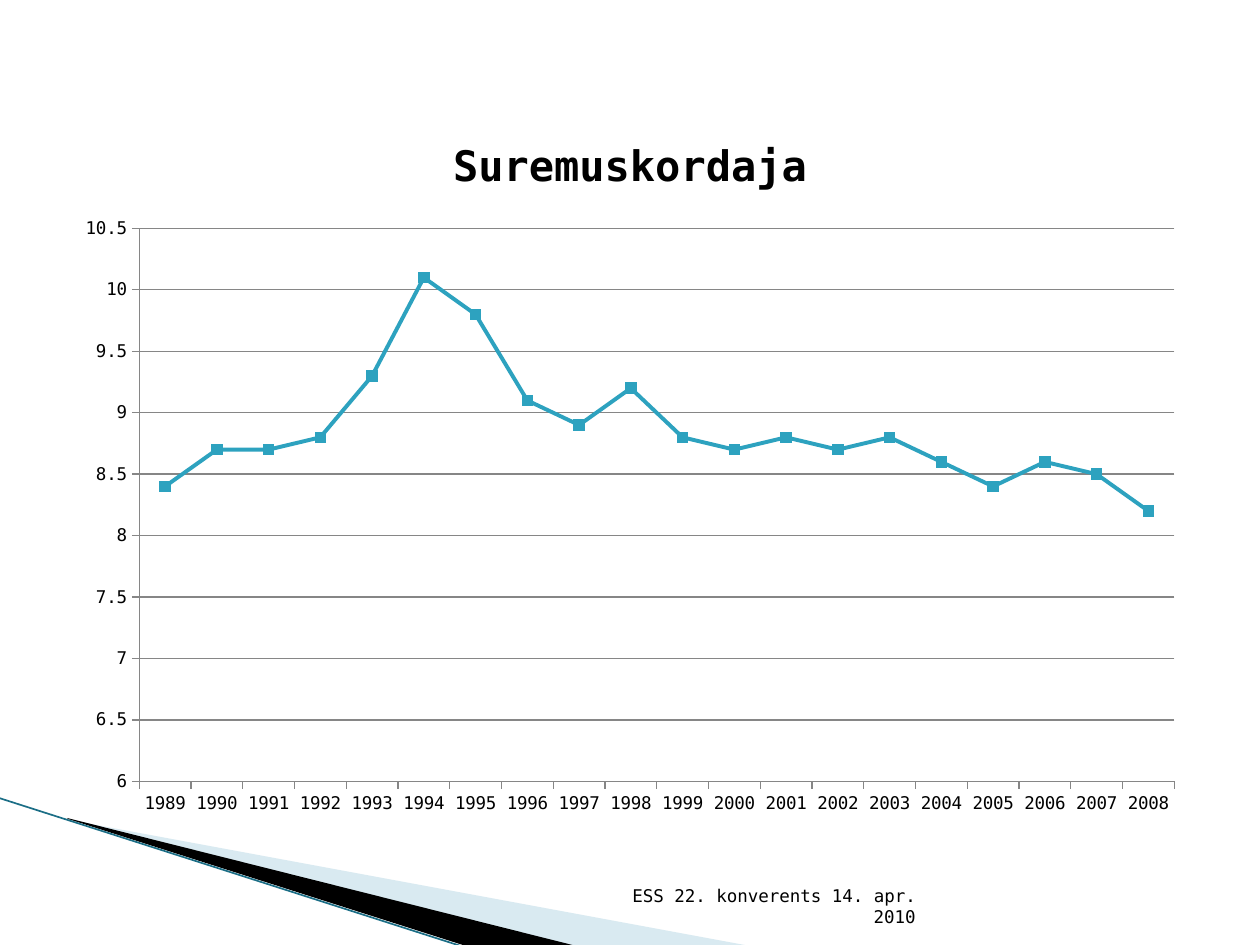
from lxml import etree
from pptx import Presentation
from pptx.chart.data import CategoryChartData
from pptx.dml.color import RGBColor
from pptx.enum.chart import XL_CHART_TYPE, XL_MARKER_STYLE, XL_TICK_MARK
from pptx.enum.shapes import MSO_CONNECTOR
from pptx.enum.text import MSO_ANCHOR, PP_ALIGN
from pptx.oxml.ns import qn
from pptx.util import Pt

EMU_PER_PX = 914400 / 126
FONT = "DejaVu Sans Mono"
COLORS = {
    "text": "000000",
    "series": "2DA2BF",
    "axis": "868686",
    "pale_wedge": "A0CBDC",
    "dark_wedge": "000000",
    "edge": "1B6E86",
}
FIRST_YEAR = 1989
DEATH_RATES = [8.4, 8.7, 8.7, 8.8, 9.3, 10.1, 9.8, 9.1, 8.9, 9.2,
               8.8, 8.7, 8.8, 8.7, 8.8, 8.6, 8.4, 8.6, 8.5, 8.2]


def px(length):
    return round(length * EMU_PER_PX)


def color(name):
    return RGBColor.from_string(COLORS[name])


def style_font(font, size, bold=False):
    font.name = FONT
    font.size = Pt(size)
    font.bold = bold
    font.color.rgb = color("text")


def add_wedge(page, left, top, points, fill, opacity=100):
    corners = [(left + x, top + y) for x, y in points]
    builder = page.shapes.build_freeform(*corners[0], scale=EMU_PER_PX)
    builder.add_line_segments(corners[1:], close=True)
    wedge = builder.convert_to_shape()
    wedge.shadow.inherit = False
    wedge.fill.solid()
    wedge.fill.fore_color.rgb = color(fill)
    wedge.line.fill.background()
    if opacity < 100:
        tint = wedge.fill._xPr.find(qn("a:solidFill"))[0]
        etree.SubElement(tint, qn("a:alpha"), val=str(opacity * 1000))


def add_corner(page, left, top):
    # Two wedges and a thin edge sweep across the lower left corner
    add_wedge(page, left, top, [(69, 22), (750, 148), (575, 148), (69, 21)],
              "pale_wedge", 40)
    add_wedge(page, left, top, [(67, 20), (576, 148), (469, 149), (68, 21)],
              "dark_wedge")
    edge = page.shapes.add_connector(
        MSO_CONNECTOR.STRAIGHT, px(left - 1), px(top), px(left + 467), px(top + 150))
    edge.line.color.rgb = color("edge")
    edge.line.width = Pt(0.95)
    etree.SubElement(edge._element.spPr, qn("a:effectLst"))


def add_footer(page, left, top, width, height):
    box = page.shapes.add_textbox(px(left), px(top), px(width), px(height))
    frame = box.text_frame
    frame.word_wrap = True
    frame.vertical_anchor = MSO_ANCHOR.BOTTOM
    frame.text = "ESS 22. konverents 14. apr. 2010"
    para = frame.paragraphs[0]
    para.alignment = PP_ALIGN.RIGHT
    style_font(para.runs[0].font, 10)


def add_rate_chart(page, left, top, width, height):
    data = CategoryChartData(number_format="General")
    data.categories = [str(FIRST_YEAR + i) for i in range(len(DEATH_RATES))]
    data.add_series("Suremuskordaja", DEATH_RATES)
    chart = page.shapes.add_chart(
        XL_CHART_TYPE.LINE_MARKERS, px(left), px(top), px(width), px(height), data).chart
    style_font(chart.font, 10)
    chart.has_legend = False

    # Title
    chart.has_title = True
    title = chart.chart_title
    title.include_in_layout = False
    title.text_frame.text = "Suremuskordaja"
    style_font(title.text_frame.paragraphs[0].runs[0].font, 24, bold=True)

    # Axes and gridlines
    values = chart.value_axis
    values.minimum_scale = 6
    values.maximum_scale = 10.5
    values.major_unit = 0.5
    values.has_major_gridlines = True
    for axis in (values, chart.category_axis):
        axis.major_tick_mark = XL_TICK_MARK.OUTSIDE
        axis.minor_tick_mark = XL_TICK_MARK.NONE
    for part in (values, chart.category_axis, values.major_gridlines):
        part.format.line.color.rgb = color("axis")
        part.format.line.width = Pt(0.75)

    # Line with square markers
    chart.plots[0].vary_by_categories = False
    series = chart.plots[0].series[0]
    series.smooth = False
    series.format.line.color.rgb = color("series")
    series.format.line.width = Pt(2.25)
    marker = series.marker
    marker.style = XL_MARKER_STYLE.SQUARE
    marker.size = 6
    marker.format.fill.solid()
    marker.format.fill.fore_color.rgb = color("series")
    marker.format.line.color.rgb = color("series")


def main():
    deck = Presentation()
    deck.slide_width = px(1260)
    deck.slide_height = px(945)
    page = deck.slides.add_slide(deck.slide_layouts[6])
    add_corner(page, 0, 798)
    add_footer(page, 604, 883, 324, 50)
    add_rate_chart(page, 63, 108, 1134, 720)
    deck.save("out.pptx")


if __name__ == "__main__":
    main()
